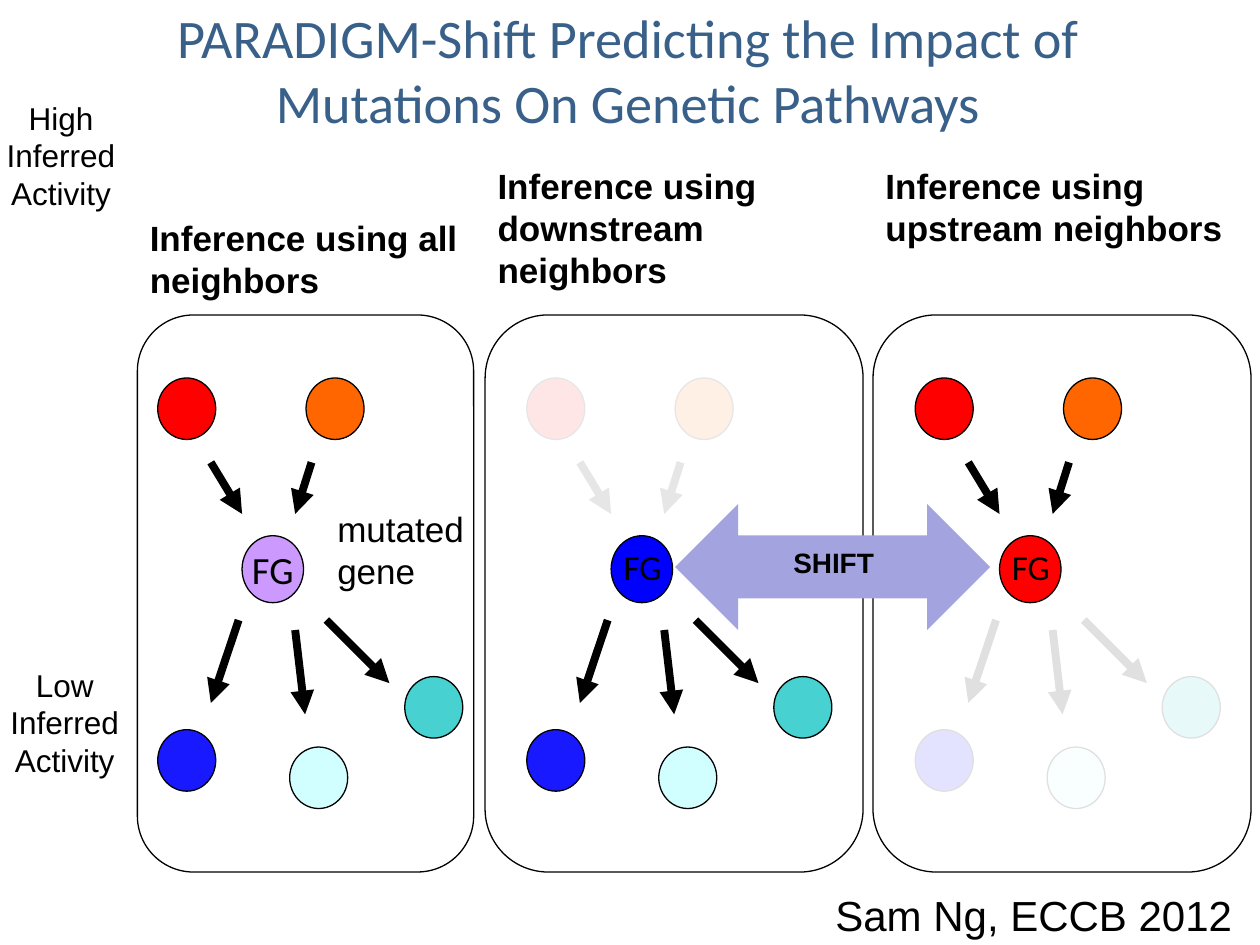
from lxml import etree
from pptx import Presentation
from pptx.dml.color import RGBColor
from pptx.enum.shapes import MSO_CONNECTOR, MSO_SHAPE
from pptx.enum.text import MSO_ANCHOR, PP_ALIGN
from pptx.oxml.ns import qn
from pptx.util import Cm, Pt

ROUNDED, OVAL, RECTANGLE = MSO_SHAPE.ROUNDED_RECTANGLE, MSO_SHAPE.OVAL, MSO_SHAPE.RECTANGLE
DOUBLE_ARROW = MSO_SHAPE.LEFT_RIGHT_ARROW
STRAIGHT = MSO_CONNECTOR.STRAIGHT
LEFT, CENTER = PP_ALIGN.LEFT, PP_ALIGN.CENTER
TOP, MIDDLE = MSO_ANCHOR.TOP, MSO_ANCHOR.MIDDLE
BLACK, WHITE = "000000", "FFFFFF"

# All positions and sizes are in centimetres.
TITLE = "PARADIGM-Shift Predicting the Impact of\vMutations On Genetic Pathways"
PANEL_TOP, PANEL_HEIGHT = 6.35, 11.23
NODE_SIZE, GENE_SIZE = (1.17, 1.24), (1.24, 1.35)
GENE_OFFSET, GENE_TOP = 1.7, 10.8

PANELS = [
    {"heading": "Inference using all neighbors", "heading_top": 4.24, "heading_height": 1.96,
     "left": 2.77, "width": 6.78, "network_left": 3.18, "gene": "CC99FF",
     "label_offset": 1.65, "label_size": 22, "veil": None},
    {"heading": "Inference using downstream neighbors", "heading_top": 3.18, "heading_height": 2.82,
     "left": 9.78, "width": 7.62, "network_left": 10.62, "gene": "0000FF",
     "label_offset": 1.7, "label_size": 20, "veil": (10.21, 6.78, 6.55, 3.81, 90)},
    {"heading": "Inference using upstream neighbors", "heading_top": 3.18, "heading_height": 1.96,
     "left": 17.6, "width": 7.62, "network_left": 18.45, "gene": "FF0000",
     "label_offset": 1.7, "label_size": 20, "veil": (18.24, 12.27, 6.78, 4.24, 88)},
]

# Offset from the network's left edge, top, colour, opacity in percent
NEIGHBORS = [
    (0, 7.62, "FF0000", 100),
    (2.99, 7.62, "FF6600", 100),
    (0, 14.71, "0000FF", 90),
    (2.66, 15.06, "CCFFFF", 90),
    (4.98, 13.64, "33CCCC", 90),
]

# Start offset, start y, end offset, end y
ARROWS = [
    (1.07, 9.32, 1.7, 10.36),
    (3.1, 9.32, 2.77, 10.36),
    (2.77, 12.7, 2.97, 14.4),
    (1.63, 12.5, 1.07, 14.17),
    (3.4, 12.5, 4.67, 13.77),
]

ACTIVITY_LABELS = [
    ("High Inferred Activity", (-0.69, 1.91, 3.84, 2.44)),
    ("Low Inferred Activity", (-0.36, 13.34, 3.33, 2.44)),
]


def color(hex_string):
    return RGBColor.from_string(hex_string)


def add_shape(slide, kind, box, fill=None, opacity=100, outlined=True):
    shape = slide.shapes.add_shape(kind, *map(Cm, box))
    shape.shadow.inherit = False
    if fill:
        shape.fill.solid()
        shape.fill.fore_color.rgb = color(fill)
        if opacity < 100:
            fill_color = shape.fill._xPr.find(qn("a:solidFill"))[0]
            etree.SubElement(fill_color, qn("a:alpha"), val=str(opacity * 1000))
    else:
        shape.fill.background()
    if outlined:
        shape.line.color.rgb = color(BLACK)
        shape.line.width = Pt(0.75)
    else:
        shape.line.fill.background()
    return shape


def add_arrow(slide, start_x, start_y, end_x, end_y):
    arrow = slide.shapes.add_connector(STRAIGHT, *map(Cm, (start_x, start_y, end_x, end_y)))
    arrow.line.color.rgb = color(BLACK)
    arrow.line.width = Pt(4.5)
    etree.SubElement(arrow.line._get_or_add_ln(), qn("a:tailEnd"), type="triangle")
    etree.SubElement(arrow._element.spPr, qn("a:effectLst"))


def add_text(slide, text, box, size, font="Arial", font_color=BLACK, bold=False,
             align=LEFT, anchor=TOP, wrap=True, insets=(0.25, 0.13, 0.25, 0.13)):
    """Add a text box; insets are left, top, right, bottom."""
    frame = slide.shapes.add_textbox(*map(Cm, box)).text_frame
    frame.word_wrap = wrap
    frame.vertical_anchor = anchor
    (frame.margin_left, frame.margin_top,
     frame.margin_right, frame.margin_bottom) = map(Cm, insets)
    frame.text = text
    for paragraph in frame.paragraphs:
        paragraph.alignment = align
        for run in paragraph.runs:
            run.font.name = font
            run.font.size = Pt(size)
            run.font.bold = bold
            run.font.color.rgb = color(font_color)


def add_panel(slide, panel):
    origin = panel["network_left"]
    frame = add_shape(slide, ROUNDED,
                      (panel["left"], PANEL_TOP, panel["width"], PANEL_HEIGHT))
    frame.adjustments[0] = 0.167
    for offset, top, fill, opacity in NEIGHBORS:
        add_shape(slide, OVAL, (origin + offset, top, *NODE_SIZE), fill, opacity)
    add_shape(slide, OVAL, (origin + GENE_OFFSET, GENE_TOP, *GENE_SIZE), panel["gene"])
    for start_offset, start_y, end_offset, end_y in ARROWS:
        add_arrow(slide, origin + start_offset, start_y, origin + end_offset, end_y)
    add_text(slide, "FG", (origin + panel["label_offset"], 10.87, 1.9, 1.15),
             panel["label_size"], font="Calibri")
    if panel["veil"]:
        *box, opacity = panel["veil"]
        add_shape(slide, RECTANGLE, box, WHITE, opacity, outlined=False)
    add_text(slide, panel["heading"],
             (panel["left"], panel["heading_top"], 7.42, panel["heading_height"]),
             20, bold=True)


def main():
    presentation = Presentation()
    presentation.slide_width, presentation.slide_height = Cm(25.4), Cm(19.05)
    slide = presentation.slides.add_slide(presentation.slide_layouts[6])

    add_text(slide, TITLE, (1.27, -0.2, 22.86, 3.18), 31, font="Calibri",
             font_color="386089", align=CENTER, anchor=MIDDLE, insets=(0.1, 0.1, 0.2, 0.1))
    for panel in PANELS:
        add_panel(slide, panel)

    add_shape(slide, DOUBLE_ARROW, (13.61, 10.16, 6.35, 2.54), "A3A3E0", outlined=False)
    add_text(slide, "SHIFT", (14.48, 10.87, 4.65, 0.94), 16, bold=True, align=CENTER)
    add_text(slide, "Sam Ng, ECCB 2012", (16.59, 17.81, 8.59, 1.27), 24, wrap=False)
    for label, box in ACTIVITY_LABELS:
        add_text(slide, label, box, 18, align=CENTER, insets=(0.13, 0.08, 0.13, 0.08))
    add_text(slide, "mutated\ngene", (6.55, 10.11, 3.1, 1.96), 20, wrap=False)

    presentation.save("out.pptx")


if __name__ == "__main__":
    main()
